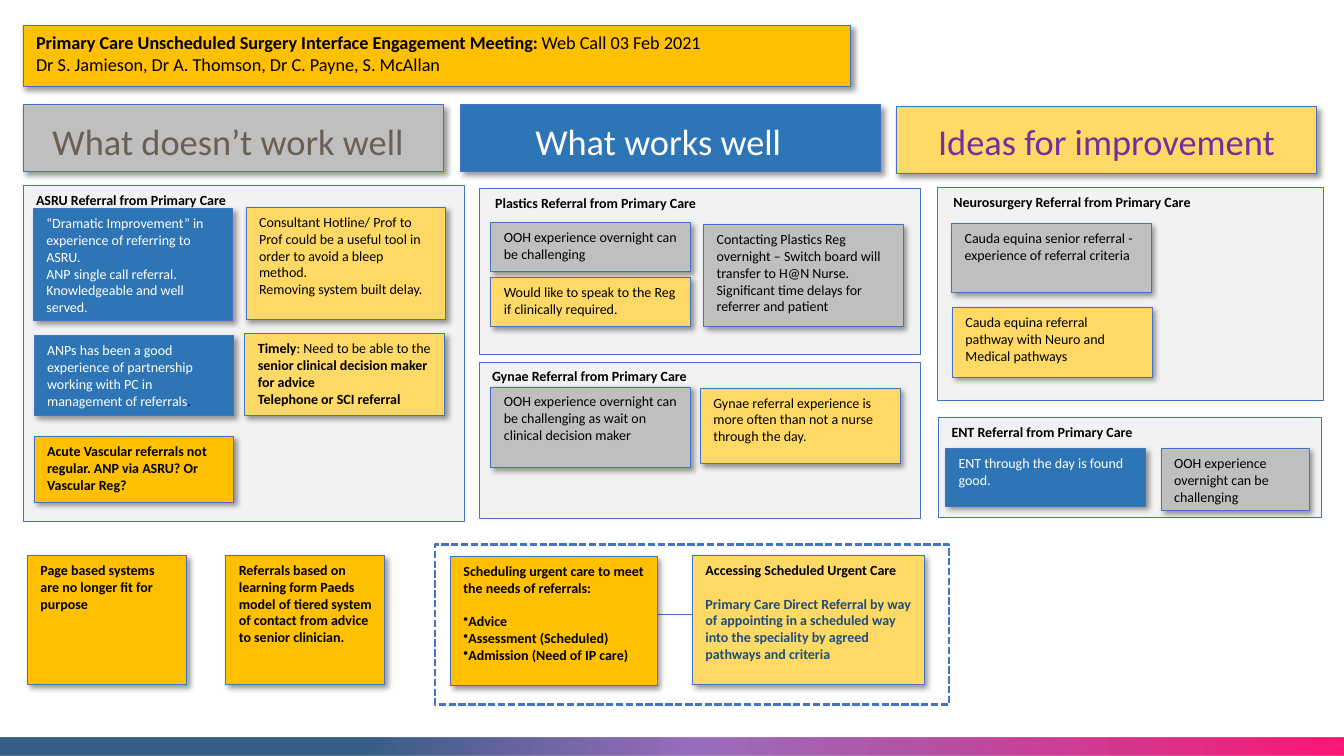
from lxml import etree
from pptx import Presentation
from pptx.dml import color
from pptx.enum import dml, shapes, text
from pptx.oxml import ns
from pptx.util import Cm, Pt

BLUE, GREY, YELLOW, AMBER = "2E75B6", "BFBFBF", "FFD966", "FFC000"
BLACK, WHITE, EDGE = "000000", "FFFFFF", "4472C4"
BOLD, REGULAR = {"bold": True}, {"bold": False}
CARD_WIDTH = 5.03

HEADINGS = [  # left, top, fill, text, text colour
    (0.58, 2.64, GREY, "What doesn’t work well", "695F54"),
    (11.61, 2.64, BLUE, "What works well", WHITE),
    (22.58, 2.69, YELLOW, "Ideas for improvement", "7030A0"),
]

PANELS = [  # left, top, width, height, left inset, heading
    (0.58, 4.67, 11.13, 8.48, 0.33, "ASRU Referral from Primary Care"),
    (12.07, 4.75, 11.13, 4.17, 0.41, "Plastics Referral from Primary Care"),
    (12.07, 9.12, 11.13, 3.94, 0.33, "Gynae Referral from Primary Care"),
    (23.62, 4.72, 9.73, 5.38, 0.41, "Neurosurgery Referral from Primary Care"),
    (23.65, 10.52, 9.65, 2.51, 0.33, "ENT Referral from Primary Care"),
]

CARDS = [  # left, top, width, height, fill, paragraphs
    (0.84, 5.26, CARD_WIDTH, 2.82, BLUE,
     ["“Dramatic Improvement” in experience of referring to ASRU.",
      "ANP single call referral. Knowledgeable and well served."]),
    (6.2, 5.23, CARD_WIDTH, 2.82, YELLOW,
     ["Consultant Hotline/ Prof to Prof could be a useful tool in order to avoid a bleep method.",
      "Removing system built delay."]),
    (0.86, 8.46, CARD_WIDTH, 2.01, BLUE,
     [[("ANPs has been a good experience of partnership working with PC in "
        "management of referrals", {}), (".", {"color": BLACK})]]),
    (6.17, 8.41, CARD_WIDTH, 2.06, YELLOW,
     [[("Timely", BOLD), (": Need to be able to the ", {}),
       ("senior clinical decision maker for advice", BOLD)],
      [("Telephone or SCI referral", BOLD)]]),
    (12.37, 5.61, CARD_WIDTH, 1.24, GREY, ["OOH experience overnight can be challenging"]),
    (12.37, 6.99, CARD_WIDTH, 1.24, YELLOW,
     ["Would like to speak to the Reg if clinically required."]),
    (17.73, 5.66, CARD_WIDTH, 2.57, GREY,
     ["Contacting Plastics Reg overnight – Switch board will transfer to H@N Nurse. "
      "Significant time delays for referrer and patient"]),
    (12.37, 9.75, CARD_WIDTH, 2.03, GREY,
     ["OOH experience overnight can be challenging as wait on clinical decision maker"]),
    (17.65, 9.78, CARD_WIDTH, 1.9, YELLOW,
     ["Gynae referral experience is more often than not a nurse through the day."]),
    (23.98, 5.64, CARD_WIDTH, 1.73, GREY,
     ["Cauda equina senior referral - experience of referral criteria"]),
    (24, 7.75, CARD_WIDTH, 1.75, YELLOW,
     ["Cauda equina referral pathway with Neuro and Medical pathways"]),
    (23.83, 11.3, CARD_WIDTH, 1.45, BLUE, ["ENT through the day is found good."]),
    (29.26, 11.3, 3.73, 1.57, GREY, ["OOH experience overnight can be challenging"]),
]

BOLD_CARDS = [
    (0.86, 11, CARD_WIDTH, 1.65, AMBER,
     ["Acute Vascular referrals not regular. ANP via ASRU? Or Vascular Reg?"]),
    (0.69, 14, 4.01, 3.25, AMBER, ["Page based systems are no longer fit for purpose"]),
    (5.69, 14, 4.01, 3.25, AMBER,
     ["Referrals based on learning form Paeds model of tiered system of contact "
      "from advice to senior clinician."]),
]


def rgb(value):
    return color.RGBColor.from_string(value)


def set_all(target, values):
    for name, value in values.items():
        setattr(target, name, value)


def add_node(parent, tag, **attributes):
    return etree.SubElement(parent, ns.qn(tag), attributes)


def add_tinted(parent, value, alpha):
    """Add a colour with its opacity in percent."""
    tint = add_node(parent, "a:srgbClr", val=value)
    add_node(tint, "a:alpha", val=str(alpha * 1000))


def add_box(slide, left, top, width, height, fill=None, raised=False, line_width=0.5):
    shape = slide.shapes.add_shape(
        shapes.MSO_SHAPE.RECTANGLE, Cm(left), Cm(top), Cm(width), Cm(height))
    shape.shadow.inherit = False
    if fill:
        shape.fill.solid()
        shape.fill.fore_color.rgb = rgb(fill)
    else:
        shape.fill.background()
    shape.line.color.rgb = rgb(EDGE)
    shape.line.width = Pt(line_width)
    if raised:
        effects = shape._element.spPr.find(ns.qn("a:effectLst"))
        shadow = add_node(effects, "a:outerShdw", blurRad=str(Pt(4)), dist=str(Pt(3)),
                          dir="2700000", algn="tl", rotWithShape="0")
        add_tinted(shadow, BLACK, 40)
    return shape


def add_run(paragraph, words, style):
    run = paragraph.add_run()
    run.text = words
    style = {"name": "Calibri", **style}
    run.font.color.rgb = rgb(style.pop("color"))
    set_all(run.font, style)


def write(shape, paragraphs, inset=0.33, **style):
    """Fill a box; a paragraph is a string or a list of (words, style changes)."""
    frame = shape.text_frame
    set_all(frame, {"word_wrap": True, "vertical_anchor": text.MSO_ANCHOR.TOP,
                    "margin_left": Cm(inset), "margin_right": Cm(0.33),
                    "margin_top": Cm(0.15), "margin_bottom": Cm(0.15)})
    style = {"size": Pt(10), "color": BLACK, **style}
    for index, content in enumerate(paragraphs):
        paragraph = frame.add_paragraph() if index else frame.paragraphs[0]
        paragraph.alignment = text.PP_ALIGN.LEFT
        runs = [(content, {})] if isinstance(content, str) else content
        for words, changes in runs:
            add_run(paragraph, words, {**style, **changes})
    return frame.paragraphs


def add_card(slide, left, top, width, height, fill, paragraphs, **style):
    shape = add_box(slide, left, top, width, height, fill, raised=True)
    return write(shape, paragraphs, color=WHITE if fill == BLUE else BLACK, **style)


def add_headings(slide):
    """Place the three column headings in the title, centred on tab stops."""
    for left, top, fill, _, _ in HEADINGS:
        add_box(slide, left, top, 10.59, 1.68, fill, raised=True)
    title = slide.shapes.title
    slide.shapes._spTree.append(title._element)
    set_all(title, {"left": 0, "top": Cm(2.87), "width": Cm(33.48), "height": Cm(1.5)})
    inset = 1.32
    set_all(title.text_frame, {"auto_size": text.MSO_AUTO_SIZE.NONE, "word_wrap": True,
                               "vertical_anchor": text.MSO_ANCHOR.MIDDLE,
                               "margin_left": Cm(inset), "margin_right": 0})
    paragraph = title.text_frame.paragraphs[0]
    set_all(paragraph, {"alignment": text.PP_ALIGN.LEFT, "line_spacing": 0.9})
    tabs = add_node(paragraph._p.get_or_add_pPr(), "a:tabLst")
    for center in (16.59, 27.89):
        add_node(tabs, "a:tab", pos=str(Cm(center - inset)), algn="ctr")
    for index, (_, _, _, words, tone) in enumerate(HEADINGS):
        add_run(paragraph, "\t" + words if index else words, {"size": Pt(26), "color": tone})


def add_urgent_care(slide):
    line = slide.shapes.add_connector(
        shapes.MSO_CONNECTOR.STRAIGHT, Cm(16.51), Cm(15.49), Cm(17.5), Cm(15.49))
    line.line.color.rgb = rgb(EDGE)
    line.line.width = Pt(1)
    add_node(line._element.spPr, "a:effectLst")

    access = add_card(slide, 17.45, 14, 5.84, 3.25, YELLOW, [
        "Accessing Scheduled Urgent Care",
        [("Primary Care Direct Referral by way of appointing in a scheduled way into "
          "the speciality by agreed pathways and criteria", {"color": "1F4E79"})],
    ], bold=True)
    schedule = add_card(slide, 11.35, 14.02, 5.21, 3.25, AMBER, [
        "Scheduling urgent care to meet the needs of referrals:",
        "Advice", "Assessment (Scheduled)", "Admission (Need of IP care)",
    ], bold=True)
    for paragraph in schedule[1:]:
        add_node(paragraph._p.get_or_add_pPr(), "a:buChar", char="•")
    for paragraphs in (access, schedule):
        paragraphs[1].space_before = Pt(12)

    frame = add_box(slide, 10.97, 13.72, 12.95, 4.04, line_width=1.75)
    frame.line.dash_style = dml.MSO_LINE.SQUARE_DOT


def add_footer_strip(slide):
    strip = add_box(slide, 0, 18.59, 33.87, 0.46)
    strip.line.fill.background()
    strip.fill.gradient()
    strip.fill.gradient_angle = 0
    stops = strip._element.spPr.find(ns.qn("a:gradFill")).find(ns.qn("a:gsLst"))
    stops.clear()
    for place, tone, alpha in ((27, "1F4E79", 90), (52, "7030A0", 70), (100, "FF0066", 91)):
        add_tinted(add_node(stops, "a:gs", pos=str(place * 1000)), tone, alpha)


def main():
    presentation = Presentation()
    set_all(presentation, {"slide_width": Cm(33.87), "slide_height": Cm(19.05)})
    slide = presentation.slides.add_slide(presentation.slide_layouts[5])
    add_headings(slide)
    add_card(slide, 0.58, 0.64, 20.85, 1.55, AMBER, [
        [("Primary Care Unscheduled Surgery Interface Engagement Meeting: ", BOLD),
         ("Web Call 03 Feb 2021", REGULAR)],
        "Dr S. Jamieson, Dr A. Thomson, Dr C. Payne, S. McAllan",
    ], size=Pt(13))
    for *place, inset, heading in PANELS:
        write(add_box(slide, *place, "F2F2F2"), [heading], inset, bold=True)
    for card in CARDS:
        add_card(slide, *card)
    for card in BOLD_CARDS:
        add_card(slide, *card, bold=True)
    add_urgent_care(slide)
    add_footer_strip(slide)
    presentation.save("out.pptx")


if __name__ == "__main__":
    main()
